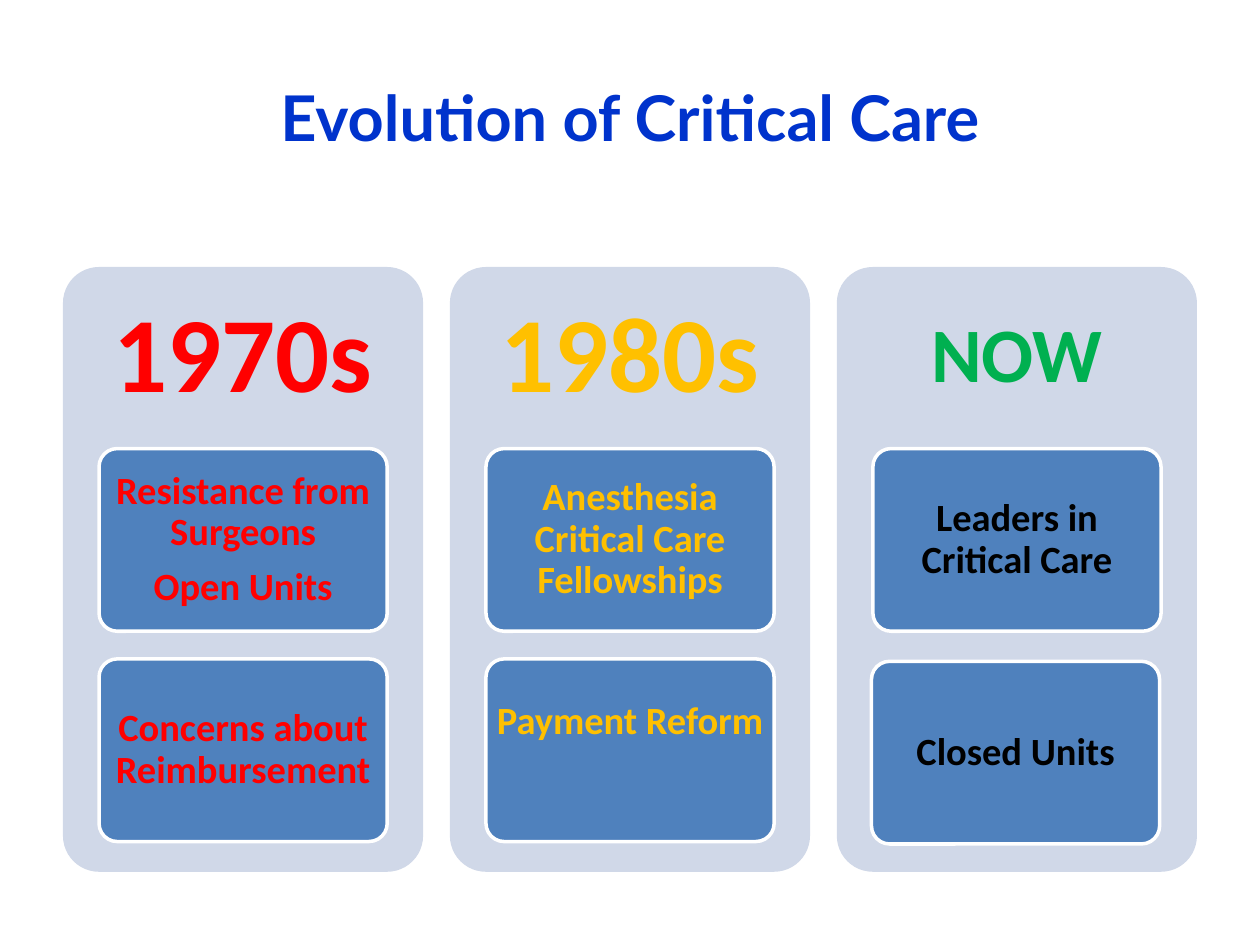
"""Build the Evolution of Critical Care slide with three era columns."""
from dataclasses import dataclass

import pptx
import pptx.dml.color
import pptx.enum.shapes
import pptx.enum.text
import pptx.slide
import pptx.text.text
import pptx.util

RGBColor = pptx.dml.color.RGBColor
Pt = pptx.util.Pt

TITLE_BLUE = RGBColor(0x00, 0x33, 0xCC)
PANEL_BLUE = RGBColor(0xD0, 0xD8, 0xE8)
CARD_BLUE = RGBColor(0x4F, 0x81, 0xBD)
WHITE = RGBColor(0xFF, 0xFF, 0xFF)
RED = RGBColor(0xFF, 0x00, 0x00)
AMBER = RGBColor(0xFF, 0xC0, 0x00)
GREEN = RGBColor(0x00, 0xB0, 0x50)
BLACK = RGBColor(0x00, 0x00, 0x00)

PANEL_LEFT, PANEL_TOP = 36, 152.6
PANEL_WIDTH, PANEL_HEIGHT = 205.8, 345.6
PANEL_PITCH = 221.1
HEADING_HEIGHT = 103.7
CARD_INDENT = 20.6
CARD_WIDTH, CARD_HEIGHT = 164.7, 104.4
CARD_PITCH = 120.2


@dataclass(frozen=True)
class Card:
    lines: tuple[str, ...]
    shift_left: float = 0
    shift_top: float = 0
    bottom_margin: float = 0.6


@dataclass(frozen=True)
class Era:
    heading: str
    heading_size: float
    heading_margin: float
    heading_color: RGBColor
    card_color: RGBColor
    cards: tuple[Card, ...]


ERAS = (
    Era("1970s", 61, 18, RED, RED, (
        Card(("Resistance from Surgeons", "Open Units")),
        Card(("Concerns about Reimbursement",)),
    )),
    Era("1980s", 61, 18, AMBER, AMBER, (
        Card(("Anesthesia Critical Care Fellowships",)),
        Card(("Payment Reform",), bottom_margin=33),
    )),
    Era("NOW", 44, 13, GREEN, BLACK, (
        Card(("Leaders in Critical Care",)),
        Card(("Closed Units",), shift_left=-0.8, shift_top=1.4),
    )),
)


def write_lines(frame: pptx.text.text.TextFrame, lines: tuple[str, ...],
                size: float, color: RGBColor) -> None:
    frame.word_wrap = True
    frame.vertical_anchor = pptx.enum.text.MSO_ANCHOR.MIDDLE
    frame.text = "\n".join(lines)
    for index, paragraph in enumerate(frame.paragraphs):
        paragraph.alignment = pptx.enum.text.PP_ALIGN.CENTER
        paragraph.line_spacing = 0.9
        paragraph.space_before = Pt(7.7 if index else 0)
        paragraph.font.name = "Calibri"
        paragraph.font.size = Pt(size)
        paragraph.font.bold = True
        paragraph.font.color.rgb = color


def set_margins(frame: pptx.text.text.TextFrame, side: float,
                top: float, bottom: float) -> None:
    frame.margin_left = frame.margin_right = Pt(side)
    frame.margin_top = Pt(top)
    frame.margin_bottom = Pt(bottom)


def add_rounded(slide: pptx.slide.Slide, left: float, top: float, width: float,
                height: float, fill: RGBColor):
    shape = slide.shapes.add_shape(
        pptx.enum.shapes.MSO_SHAPE.ROUNDED_RECTANGLE,
        Pt(left), Pt(top), Pt(width), Pt(height))
    shape.adjustments[0] = 0.1
    shape.shadow.inherit = False
    shape.fill.solid()
    shape.fill.fore_color.rgb = fill
    shape.line.fill.background()
    return shape


def add_card(slide: pptx.slide.Slide, card: Card, left: float, top: float,
             color: RGBColor) -> None:
    shape = add_rounded(slide, left + card.shift_left, top + card.shift_top,
                        CARD_WIDTH, CARD_HEIGHT, CARD_BLUE)
    shape.line.color.rgb = WHITE
    shape.line.width = Pt(2)
    set_margins(shape.text_frame, 1.2, 0.6, card.bottom_margin)
    write_lines(shape.text_frame, card.lines, 22, color)


def add_era(slide: pptx.slide.Slide, era: Era, left: float) -> None:
    add_rounded(slide, left, PANEL_TOP, PANEL_WIDTH, PANEL_HEIGHT, PANEL_BLUE)
    heading = slide.shapes.add_textbox(
        Pt(left), Pt(PANEL_TOP), Pt(PANEL_WIDTH), Pt(HEADING_HEIGHT))
    margin = era.heading_margin
    set_margins(heading.text_frame, margin, margin, margin)
    write_lines(heading.text_frame, (era.heading,), era.heading_size,
                era.heading_color)
    for row, card in enumerate(era.cards):
        add_card(slide, card, left + CARD_INDENT,
                 PANEL_TOP + HEADING_HEIGHT + row * CARD_PITCH, era.card_color)


def add_title(slide: pptx.slide.Slide, text: str) -> None:
    title = slide.shapes.title
    title.left, title.top = Pt(36), Pt(21.6)
    title.width, title.height = Pt(648), Pt(90)
    title.text_frame.text = text
    title.text_frame.vertical_anchor = pptx.enum.text.MSO_ANCHOR.MIDDLE
    paragraph = title.text_frame.paragraphs[0]
    paragraph.alignment = pptx.enum.text.PP_ALIGN.CENTER
    paragraph.font.name = "Lato"
    paragraph.font.size = Pt(36)
    paragraph.font.bold = True
    paragraph.font.color.rgb = TITLE_BLUE


def main() -> None:
    presentation = pptx.Presentation()
    presentation.slide_width, presentation.slide_height = Pt(720), Pt(540)
    slide = presentation.slides.add_slide(presentation.slide_layouts[5])
    add_title(slide, "Evolution of Critical Care")
    for column, era in enumerate(ERAS):
        add_era(slide, era, PANEL_LEFT + column * PANEL_PITCH)
    presentation.save("out.pptx")


if __name__ == "__main__":
    main()
